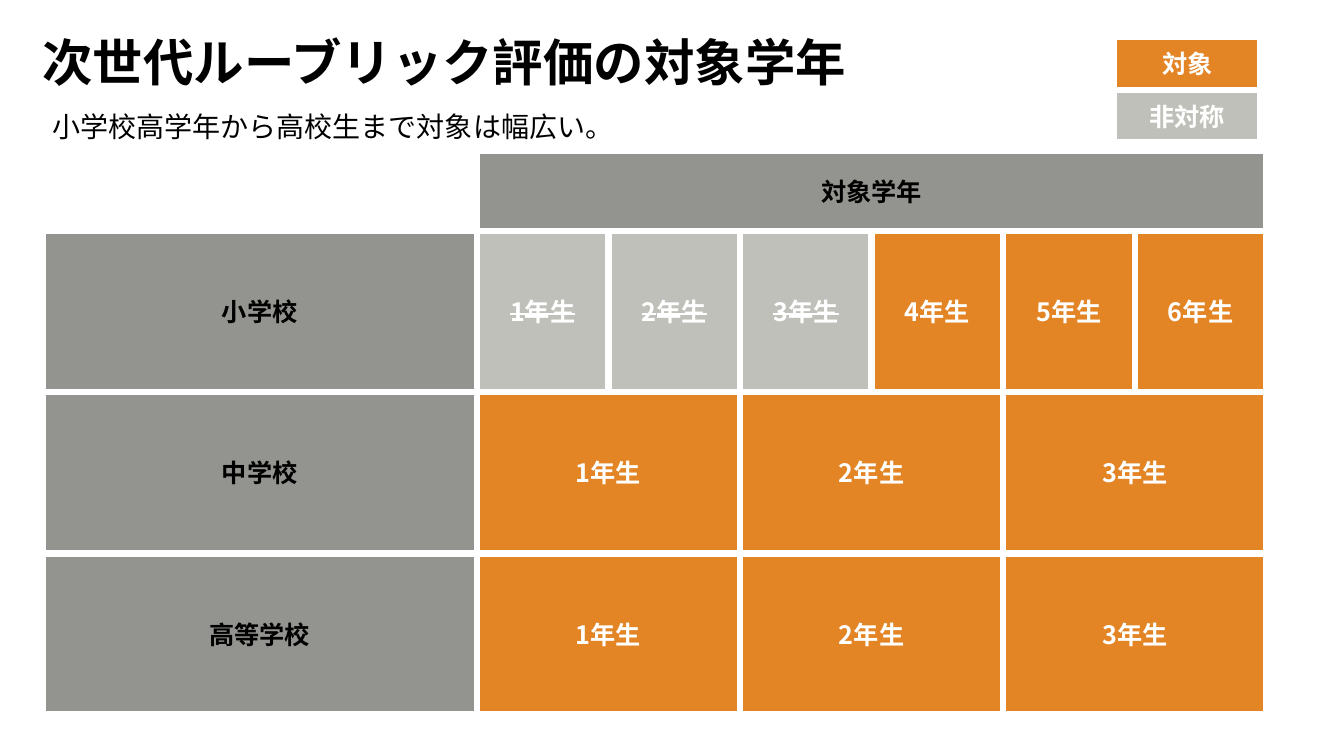
import dataclasses

import lxml.etree
import pptx
import pptx.dml.color
import pptx.enum.shapes
import pptx.enum.text
import pptx.oxml.ns
import pptx.util

Inches = pptx.util.Inches
Pt = pptx.util.Pt
RGBColor = pptx.dml.color.RGBColor
qn = pptx.oxml.ns.qn


@dataclasses.dataclass(frozen=True)
class Theme:
    font: str = "Noto Sans CJK JP"
    black: str = "000000"
    white: str = "FFFFFF"
    header: str = "4C4C45"
    target: str = "E38425"
    excluded: str = "C0C0BA"
    header_opacity: int = 60
    title_size: int = 36
    subtitle_size: int = 20
    cell_size: int = 18
    border: float = 4.5


@dataclasses.dataclass(frozen=True)
class Style:
    fill: str
    text: str
    opacity: int = 100


@dataclasses.dataclass(frozen=True)
class Box:
    left: float
    top: float
    width: float
    height: float


@dataclasses.dataclass(frozen=True)
class School:
    name: str
    grades: int
    excluded_grades: int = 0


THEME = Theme()
HEADER = Style(THEME.header, THEME.black, THEME.header_opacity)
TARGET = Style(THEME.target, THEME.white)
EXCLUDED = Style(THEME.excluded, THEME.white)

LEFT = 0.42
GRID_LEFT, GRID_WIDTH = 4.73, 7.83
HEADER_TOP, HEADER_HEIGHT = 1.5, 0.79
ROW_HEIGHT = 1.6
LEGEND_LEFT, LEGEND_TOP, LEGEND_WIDTH, LEGEND_HEIGHT = 11.05, 0.37, 1.45, 0.52

SCHOOLS = [School("小学校", 6, 3), School("中学校", 3), School("高等学校", 3)]
LEGEND = [("対象", TARGET), ("非対称", EXCLUDED)]


def set_font(paragraph, size: int, color: str, bold: bool) -> None:
    """Format a paragraph, for Latin and East Asian characters alike."""
    font = paragraph.font
    font.size = Pt(size)
    font.bold = bold
    font.color.rgb = RGBColor.from_string(color)
    font.name = THEME.font
    defaults = paragraph._p.pPr.find(qn("a:defRPr"))
    lxml.etree.SubElement(defaults, qn("a:ea"), typeface=THEME.font)


def place(shape, box: Box) -> None:
    shape.left, shape.top = Inches(box.left), Inches(box.top)
    shape.width, shape.height = Inches(box.width), Inches(box.height)


def set_margins(frame, margin: float) -> None:
    frame.margin_left = frame.margin_right = Inches(margin)
    frame.margin_top = frame.margin_bottom = Inches(margin)


def add_cell(slide, box: Box, text: str, style: Style, strike: bool = False) -> None:
    shape = slide.shapes.add_shape(
        pptx.enum.shapes.MSO_SHAPE.RECTANGLE,
        Inches(box.left), Inches(box.top), Inches(box.width), Inches(box.height))
    shape.shadow.inherit = False
    shape.fill.solid()
    shape.fill.fore_color.rgb = RGBColor.from_string(style.fill)
    if style.opacity < 100:
        color = shape._element.spPr.find(qn("a:solidFill"))[0]
        lxml.etree.SubElement(color, qn("a:alpha"), val=str(style.opacity * 1000))
    shape.line.color.rgb = RGBColor.from_string(THEME.white)
    shape.line.width = Pt(THEME.border)

    frame = shape.text_frame
    frame.word_wrap = True
    frame.vertical_anchor = pptx.enum.text.MSO_ANCHOR.MIDDLE
    set_margins(frame, 0.1)
    paragraph = frame.paragraphs[0]
    paragraph.alignment = pptx.enum.text.PP_ALIGN.CENTER
    run = paragraph.add_run()
    run.text = text
    if strike:
        run._r.get_or_add_rPr().set("strike", "sngStrike")
    set_font(paragraph, THEME.cell_size, style.text, bold=True)


def add_title(slide, text: str) -> None:
    title = slide.shapes.title
    place(title, Box(LEFT, 0.42, 12.5, 0.63))
    frame = title.text_frame
    frame.text = text
    frame.word_wrap = True
    frame.auto_size = pptx.enum.text.MSO_AUTO_SIZE.NONE
    frame.vertical_anchor = pptx.enum.text.MSO_ANCHOR.TOP
    set_margins(frame, 0)
    paragraph = frame.paragraphs[0]
    paragraph.alignment = pptx.enum.text.PP_ALIGN.LEFT
    paragraph.line_spacing = 0.8
    set_font(paragraph, THEME.title_size, THEME.black, bold=True)


def add_subtitle(slide, text: str) -> None:
    subtitle = slide.shapes.add_textbox(
        Inches(LEFT), Inches(1.04), Inches(12.5), Inches(0.83))
    frame = subtitle.text_frame
    frame.word_wrap = True
    frame.text = text
    paragraph = frame.paragraphs[0]
    paragraph.space_after = Pt(6)
    set_font(paragraph, THEME.subtitle_size, THEME.black, bold=False)


def add_school(slide, school: School, top: float) -> None:
    """Draw a row: the school's name, then its grades in equal cells."""
    name_box = Box(LEFT, top, GRID_LEFT - LEFT, ROW_HEIGHT)
    add_cell(slide, name_box, school.name, HEADER)
    width = GRID_WIDTH / school.grades
    for index in range(school.grades):
        excluded = index < school.excluded_grades
        box = Box(GRID_LEFT + index * width, top, width, ROW_HEIGHT)
        add_cell(slide, box, f"{index + 1}年生",
                 EXCLUDED if excluded else TARGET, strike=excluded)


def main() -> None:
    presentation = pptx.Presentation()
    presentation.slide_width = Inches(13.33)
    presentation.slide_height = Inches(7.5)
    title_only = presentation.slide_layouts.get_by_name("Title Only")
    slide = presentation.slides.add_slide(title_only)

    add_title(slide, "次世代ルーブリック評価の対象学年")
    add_cell(slide, Box(GRID_LEFT, HEADER_TOP, GRID_WIDTH, HEADER_HEIGHT),
             "対象学年", HEADER)
    for row, school in enumerate(SCHOOLS):
        add_school(slide, school, HEADER_TOP + HEADER_HEIGHT + row * ROW_HEIGHT)
    add_subtitle(slide, "小学校高学年から高校生まで対象は幅広い。")
    for row, (label, style) in enumerate(LEGEND):
        box = Box(LEGEND_LEFT, LEGEND_TOP + row * LEGEND_HEIGHT,
                  LEGEND_WIDTH, LEGEND_HEIGHT)
        add_cell(slide, box, label, style)

    presentation.save("out.pptx")


if __name__ == "__main__":
    main()
